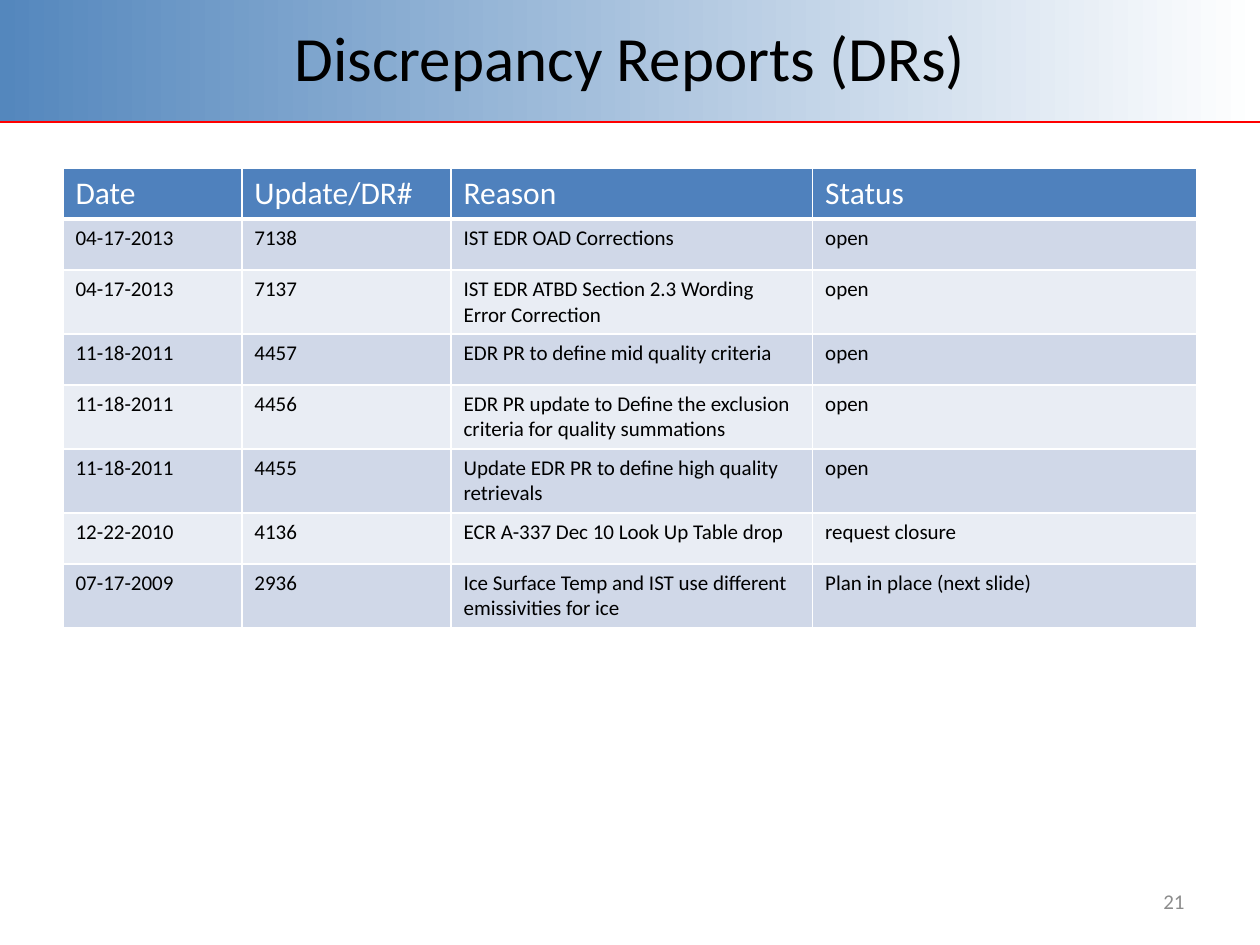
import pptx
import pptx.dml.color
import pptx.enum.shapes
import pptx.enum.text
import pptx.oxml
import pptx.oxml.ns
import pptx.util

Pt = pptx.util.Pt
ALIGN = pptx.enum.text.PP_ALIGN
MIDDLE = pptx.enum.text.MSO_ANCHOR.MIDDLE
HUES = {
    "black": "000000", "white": "FFFFFF", "blue": "5487BD", "head": "4F81BD",
    "dark": "D0D8E8", "light": "E9EDF4", "red": "FF0000", "gray": "8C8C8C",
}
WIDTHS = [102.24, 119.52, 206.64, 219.6]
ROW = 29.2
ROWS = [
    ("Date", "Update/DR#", "Reason", "Status"),
    ("04-17-2013", "7138", "IST EDR OAD Corrections", "open"),
    ("04-17-2013", "7137", "IST EDR ATBD Section 2.3 Wording Error Correction", "open"),
    ("11-18-2011", "4457", "EDR PR to define mid quality criteria", "open"),
    ("11-18-2011", "4456",
     "EDR PR update to Define the exclusion criteria for quality summations", "open"),
    ("11-18-2011", "4455", "Update EDR PR to define high quality retrievals", "open"),
    ("12-22-2010", "4136", "ECR A-337 Dec 10 Look Up Table drop", "request closure"),
    ("07-17-2009", "2936", "Ice Surface Temp and IST use different emissivities for ice",
     "Plan in place (next slide)"),
]


def hue(name):
    return pptx.dml.color.RGBColor.from_string(HUES[name])


def apply(item, **form):
    for key, value in form.items():
        setattr(item, key, value)


def write(frame, text, size, color, align=ALIGN.LEFT):
    frame.text = text
    para = frame.paragraphs[0]
    para.alignment = align
    apply(para.font, name="Calibri", size=Pt(size), bold=False)
    para.font.color.rgb = hue(color)


def add_band(slide):
    band = slide.shapes.add_shape(
        pptx.enum.shapes.MSO_SHAPE.RECTANGLE, 0, Pt(-0.5), Pt(720), Pt(70))
    band.shadow.inherit = False
    band.line.fill.background()
    band.fill.gradient()
    band.fill.gradient_angle = 0
    for stop, color, place in zip(band.fill.gradient_stops, ("blue", "white"), (0, 1)):
        stop.color.rgb = hue(color)
        stop.position = place


def add_rule(slide):
    rule = slide.shapes.add_connector(
        pptx.enum.shapes.MSO_CONNECTOR.STRAIGHT, 0, Pt(69.75), Pt(720), Pt(69.75))
    rule.line.color.rgb = hue("red")
    rule.line.width = Pt(1.25)
    pptx.oxml.ns.qn("a:effectLst")
    rule._element.spPr.append(pptx.oxml.parse_xml(
        f'<a:effectLst {pptx.oxml.ns.nsdecls("a")}/>'))


def add_title(slide, text):
    title = slide.shapes.title
    apply(title, left=Pt(36), top=0, width=Pt(648), height=Pt(64.8))
    apply(title.text_frame, vertical_anchor=MIDDLE, word_wrap=True)
    write(title.text_frame, text, 36, "black", ALIGN.CENTER)
    slide.shapes._spTree.append(title._element)


def edge(cell, side, width):
    cell._tc.get_or_add_tcPr().append(pptx.oxml.parse_xml(
        f'<a:ln{side} {pptx.oxml.ns.nsdecls("a")} w="{Pt(width)}"><a:solidFill>'
        f'<a:srgbClr val="{HUES["white"]}"/></a:solidFill></a:ln{side}>'))


def fill_cell(cell, text, row):
    head = row == 0
    for side in "LRTB":
        edge(cell, side, 3 if head and side == "B" else 1)
    cell.fill.solid()
    cell.fill.fore_color.rgb = hue("head" if head else "dark" if row % 2 else "light")
    write(cell.text_frame, text, 18 if head else 12, "white" if head else "black")


def add_grid(slide):
    grid = slide.shapes.add_table(
        len(ROWS), len(WIDTHS), Pt(36), Pt(96), Pt(sum(WIDTHS)), Pt(ROW * len(ROWS))).table
    for col, width in zip(grid.columns, WIDTHS):
        col.width = Pt(width)
    for row, texts in enumerate(ROWS):
        grid.rows[row].height = Pt(ROW)
        for col, text in enumerate(texts):
            fill_cell(grid.cell(row, col), text, row)


def add_page(slide, text):
    box = slide.shapes.add_textbox(Pt(516), Pt(500.5), Pt(168), Pt(28.8))
    apply(box.text_frame, word_wrap=True, vertical_anchor=MIDDLE)
    write(box.text_frame, text, 12, "gray", ALIGN.RIGHT)


def main():
    deck = pptx.Presentation()
    apply(deck, slide_width=Pt(720), slide_height=Pt(540))
    slide = deck.slides.add_slide(deck.slide_layouts[5])
    add_band(slide)
    add_rule(slide)
    add_title(slide, "Discrepancy Reports (DRs)")
    add_grid(slide)
    add_page(slide, "21")
    deck.save("out.pptx")


if __name__ == "__main__":
    main()
